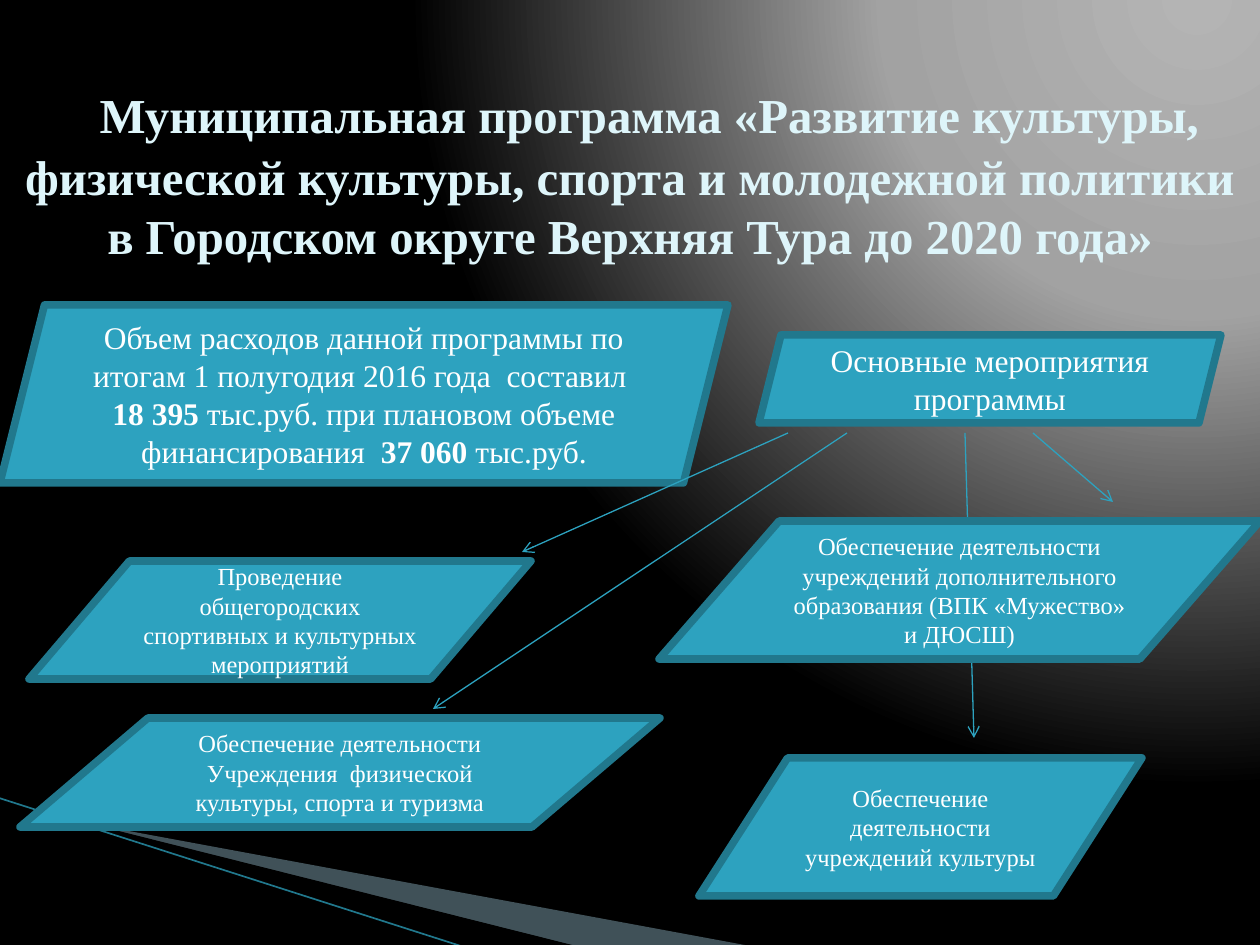
from lxml.etree import SubElement
from pptx import Presentation
from pptx.dml.color import RGBColor
from pptx.enum.shapes import MSO_CONNECTOR, MSO_SHAPE
from pptx.enum.text import MSO_ANCHOR, PP_ALIGN
from pptx.oxml import parse_xml
from pptx.oxml.ns import nsdecls, qn
from pptx.util import Pt

PX = 914400 / 126
FONT = "Times New Roman"
TEAL = RGBColor(0x2D, 0xA2, 0xBF)
EDGE = RGBColor(0x21, 0x78, 0x8D)
PALE = RGBColor(0xDE, 0xF5, 0xFA)
MIST = RGBColor(0xA0, 0xCB, 0xDC)
SKY = RGBColor(0x97, 0xC5, 0xD8)
WHITE = RGBColor(0xFF, 0xFF, 0xFF)
BLACK = RGBColor(0, 0, 0)
GRADIENT = [(0, "B4B4B4"), (40, "A2A2A2"), (100, "000000")]

BUDGET = [
    ("Объем расходов данной программы по итогам 1 полугодия 2016 года  составил  ", False),
    ("18 395 ", True),
    ("тыс.руб. при плановом объеме финансирования  ", False),
    ("37 060 ", True),
    ("тыс.руб.", False),
]
HEAD = "Основные мероприятия программы"
# Left, top, width, height and wording of each measure
MEASURES = [
    (29, 561, 502, 118, "Проведение общегородских спортивных и культурных мероприятий"),
    (659, 521, 601, 138, "Обеспечение деятельности учреждений дополнительного "
                         "образования (ВПК «Мужество» и ДЮСШ)"),
    (20, 718, 640, 109, "Обеспечение деятельности Учреждения  физической "
                        "культуры, спорта и туризма"),
    (699, 758, 443, 138, "Обеспечение деятельности учреждений культуры"),
]
ARROWS = [(788, 522, 552), (847, 433, 709), (1033, 1113, 502)]
ARROW_TOP = 433


def emu(*nums):
    return [round(n * PX) for n in nums]


def paint_back(slide):
    slide.background.fill.gradient()
    old = slide.element.find(".//" + qn("a:gradFill"))
    stops = "".join(
        f'<a:gs pos="{pos * 1000}"><a:srgbClr val="{color}"/></a:gs>'
        for pos, color in GRADIENT)
    new = parse_xml(
        f'<a:gradFill {nsdecls("a")} rotWithShape="1"><a:gsLst>{stops}</a:gsLst>'
        '<a:path path="circle"><a:fillToRect l="95000" t="-106000" '
        'r="5000" b="206000"/></a:path></a:gradFill>')
    old.getparent().replace(old, new)


def add_wedge(slide, points, color, alpha=100):
    start, *rest = points
    form = slide.shapes.build_freeform(*start, scale=PX)
    form.add_line_segments(rest, close=True)
    wedge = form.convert_to_shape()
    wedge.shadow.inherit = False
    wedge.fill.solid()
    wedge.fill.fore_color.rgb = color
    wedge.line.fill.background()
    if alpha < 100:
        tint = wedge.fill._xPr.find(".//" + qn("a:srgbClr"))
        SubElement(tint, qn("a:alpha"), val=str(alpha * 1000))


def add_line(slide, start, end, color=TEAL, width=0.75, arrow=True):
    line = slide.shapes.add_connector(MSO_CONNECTOR.STRAIGHT, *emu(*start, *end))
    line.line.color.rgb = color
    line.line.width = Pt(width)
    if arrow:
        SubElement(line.line._get_or_add_ln(), qn("a:tailEnd"), type="arrow")
    SubElement(line._element.spPr, qn("a:effectLst"))


def add_run(para, text, size, color, bold=False, font=FONT):
    run = para.add_run()
    run.text = text
    run.font.name = font
    run.font.size = Pt(size)
    run.font.bold = bold
    run.font.color.rgb = color


def set_frame(shape):
    frame = shape.text_frame
    frame.word_wrap = True
    frame.vertical_anchor = MSO_ANCHOR.MIDDLE
    para = frame.paragraphs[0]
    para.alignment = PP_ALIGN.CENTER
    return para


def add_title(slide):
    para = set_frame(slide.shapes.add_textbox(*emu(0, 38, 1260, 257)))
    add_run(para, " ", 36.9, PALE, True, "Courier New")
    add_run(para, "Муниципальная программа «Развитие культуры, физической культуры, "
            "спорта и молодежной политики в Городском округе Верхняя Тура "
            "до 2020 года»", 27.9, PALE, True)


def add_box(slide, kind, place, runs, size):
    box = slide.shapes.add_shape(kind, *emu(*place))
    box.shadow.inherit = False
    box.fill.solid()
    box.fill.fore_color.rgb = TEAL
    box.line.color.rgb = EDGE
    box.line.width = Pt(4.33)
    para = set_frame(box)
    for text, bold in runs:
        add_run(para, text, size, WHITE, bold)


def main():
    deck = Presentation()
    deck.slide_width, deck.slide_height = emu(1260, 945)
    slide = deck.slides.add_slide(deck.slide_layouts[6])

    # Backdrop
    paint_back(slide)
    add_wedge(slide, [(69, 820), (750, 946), (575, 946), (69, 819)], MIST, 40)
    add_wedge(slide, [(67, 818), (576, 946), (469, 948), (67, 819)], BLACK)
    add_line(slide, (-1, 798), (467, 948), EDGE, 0.95, arrow=False)

    # Long arrow runs behind the boxes
    add_line(slide, (965, ARROW_TOP), (974, 738))
    add_title(slide)

    # Budget, heading and measures
    add_box(slide, MSO_SHAPE.PARALLELOGRAM, (0, 305, 728, 178), BUDGET, 18)
    add_box(slide, MSO_SHAPE.PARALLELOGRAM, (759, 335, 462, 88), [(HEAD, False)], 18)
    for *place, text in MEASURES:
        add_box(slide, MSO_SHAPE.FLOWCHART_DATA, place, [(text, False)], 14)

    # Arrows from the heading
    for x, tip, foot in ARROWS:
        add_line(slide, (x, ARROW_TOP), (tip, foot))

    deck.save("out.pptx")


if __name__ == "__main__":
    main()
